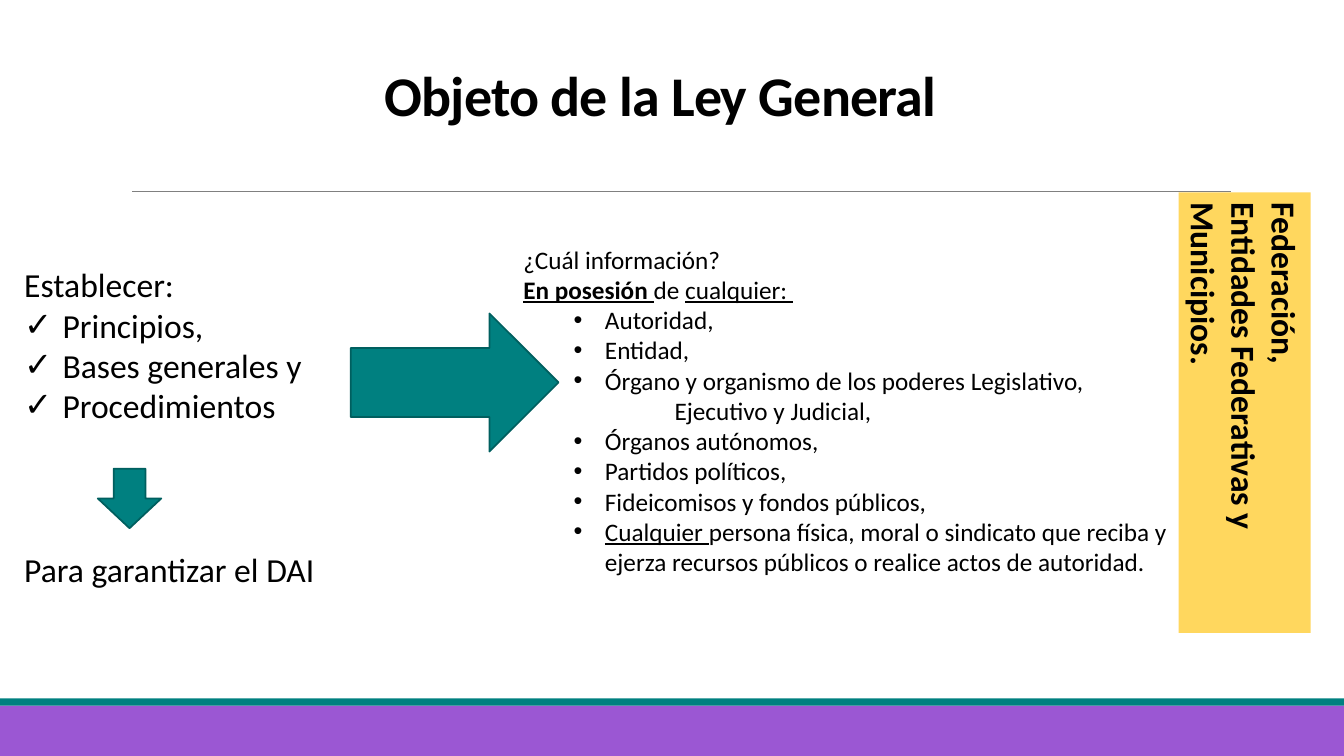
from lxml import etree
from pptx import Presentation
from pptx.dml.color import RGBColor
from pptx.enum.shapes import MSO_CONNECTOR, MSO_SHAPE
from pptx.enum.text import MSO_ANCHOR, MSO_AUTO_SIZE, PP_ALIGN
from pptx.oxml.ns import qn
from pptx.util import Inches, Pt

FONT = "Calibri"
COLORS = {
    "text": "000000",
    "teal": "008080",
    "teal_edge": "005F5F",
    "purple": "9B57D3",
    "gold": "FFC000",
    "rule": "808080",
}


def color(name):
    return RGBColor.from_string(COLORS[name])


def place(shape, left, top, width, height):
    shape.left, shape.top = Inches(left), Inches(top)
    shape.width, shape.height = Inches(width), Inches(height)


def style_run(run, size, bold=False, underline=False):
    run.font.name = FONT
    run.font.size = Pt(size)
    run.font.bold = bold
    run.font.underline = underline
    run.font.color.rgb = color("text")


def add_block(slide, kind, box, fill, edge=None):
    block = slide.shapes.add_shape(kind, *map(Inches, box))
    block.shadow.inherit = False
    block.fill.solid()
    block.fill.fore_color.rgb = color(fill)
    if edge:
        block.line.color.rgb = color(edge)
        block.line.width = Pt(1.25)
    else:
        block.line.fill.background()
    return block


def add_rule(slide, left, right, top):
    rule = slide.shapes.add_connector(
        MSO_CONNECTOR.STRAIGHT, Inches(left), Inches(top), Inches(right), Inches(top))
    rule.line.color.rgb = color("rule")
    rule.line.width = Pt(0.5)
    etree.SubElement(rule._element.spPr, qn("a:effectLst"))


def set_bullet(paragraph, bullet, margin, indent):
    properties = paragraph._p.get_or_add_pPr()
    properties.set("marL", str(Inches(margin)))
    properties.set("indent", str(Inches(indent)))
    if bullet:
        etree.SubElement(properties, qn("a:buFont")).set("typeface", "Arial")
        etree.SubElement(properties, qn("a:buChar")).set("char", bullet)
    else:
        etree.SubElement(properties, qn("a:buNone"))


def fill_list(body, box, size, items):
    """Each item: (runs, bullet, margin, indent, space before)."""
    place(body, *box)
    frame = body.text_frame
    frame.word_wrap = True
    frame.auto_size = MSO_AUTO_SIZE.NONE
    frame.vertical_anchor = MSO_ANCHOR.TOP
    for index, (runs, bullet, margin, indent, before) in enumerate(items):
        paragraph = frame.add_paragraph() if index else frame.paragraphs[0]
        set_bullet(paragraph, bullet, margin, indent)
        paragraph.line_spacing = 1.0
        paragraph.space_before = Pt(before)
        paragraph.space_after = Pt(0)
        for text, *emphasis in runs:
            run = paragraph.add_run()
            run.text = text
            style_run(run, size, *emphasis)


def plain(*runs, margin=0, before=0):
    return runs, None, margin, 0, before


def check(text):
    return [(text,)], "✓", 0.38, -0.38, 0


def dot(*runs):
    return runs, "•", 0.81, -0.31, 0


def set_title(title, text):
    place(title, 2.82, 0.72, 7.46, 0.6)
    frame = title.text_frame
    frame.text = text
    frame.auto_size = MSO_AUTO_SIZE.NONE
    frame.vertical_anchor = MSO_ANCHOR.BOTTOM
    paragraph = frame.paragraphs[0]
    paragraph.alignment = PP_ALIGN.CENTER
    paragraph.line_spacing = 0.85
    run = paragraph.runs[0]
    style_run(run, 40, bold=True)
    run.font._element.set("spc", "-50")


def add_side_label(slide, lines):
    label = add_block(slide, MSO_SHAPE.RECTANGLE, (10.16, 3.44, 4.37, 1.31), "gold")
    label.rotation = 90
    gold = label.fill._xPr.find(qn("a:solidFill"))[0]
    etree.SubElement(gold, qn("a:alpha")).set("val", "63000")
    frame = label.text_frame
    frame.text = "\n".join(lines)
    frame.word_wrap = True
    for paragraph in frame.paragraphs:
        paragraph.alignment = PP_ALIGN.LEFT
        style_run(paragraph.runs[0], 24, bold=True)


def main():
    presentation = Presentation()
    presentation.slide_width = Inches(13.33)
    presentation.slide_height = Inches(7.5)
    slide = presentation.slides.add_slide(presentation.slide_layouts[3])
    title, purpose, scope = slide.placeholders

    # Footer bands and rule under the title
    add_block(slide, MSO_SHAPE.RECTANGLE, (0, 7, 13.33, 0.5), "purple")
    add_block(slide, MSO_SHAPE.RECTANGLE, (0, 6.93, 13.33, 0.07), "teal")
    add_rule(slide, 1.31, 12.21, 1.9)

    # Title and rotated label
    set_title(title, "Objeto de la Ley General")
    add_side_label(slide, ["Federación,", "Entidades Federativas y", "Municipios."])

    # Purpose of the law
    fill_list(purpose, (0.14, 2.57, 4.48, 3.74), 24, [
        plain(("Establecer:",)),
        check("Principios,"),
        check("Bases generales y"),
        check("Procedimientos"),
        plain(("Para garantizar el DAI",), before=88),
    ])

    # Information covered
    fill_list(scope, (5.09, 2.37, 7.06, 3.43), 18, [
        plain(("¿Cuál información?",)),
        plain(("En posesión ", True, True), ("de ",), ("cualquier: ", False, True)),
        dot(("Autoridad,",)),
        dot(("Entidad,",)),
        dot(("Órgano y organismo de los poderes Legislativo,",)),
        plain(("Ejecutivo y Judicial,",), margin=1.5),
        dot(("Órganos autónomos,",)),
        dot(("Partidos políticos,",)),
        dot(("Fideicomisos y fondos públicos,",)),
        dot(("Cualquier ", False, True),
            ("persona física, moral o sindicato que reciba y ejerza recursos "
             "públicos o realice actos de autoridad.",)),
    ])

    # Arrows
    add_block(slide, MSO_SHAPE.RIGHT_ARROW, (3.48, 3.11, 2.06, 1.37), "teal", "teal_edge")
    add_block(slide, MSO_SHAPE.DOWN_ARROW, (0.97, 4.65, 0.63, 0.59), "teal", "teal_edge")

    presentation.save("out.pptx")


if __name__ == "__main__":
    main()
